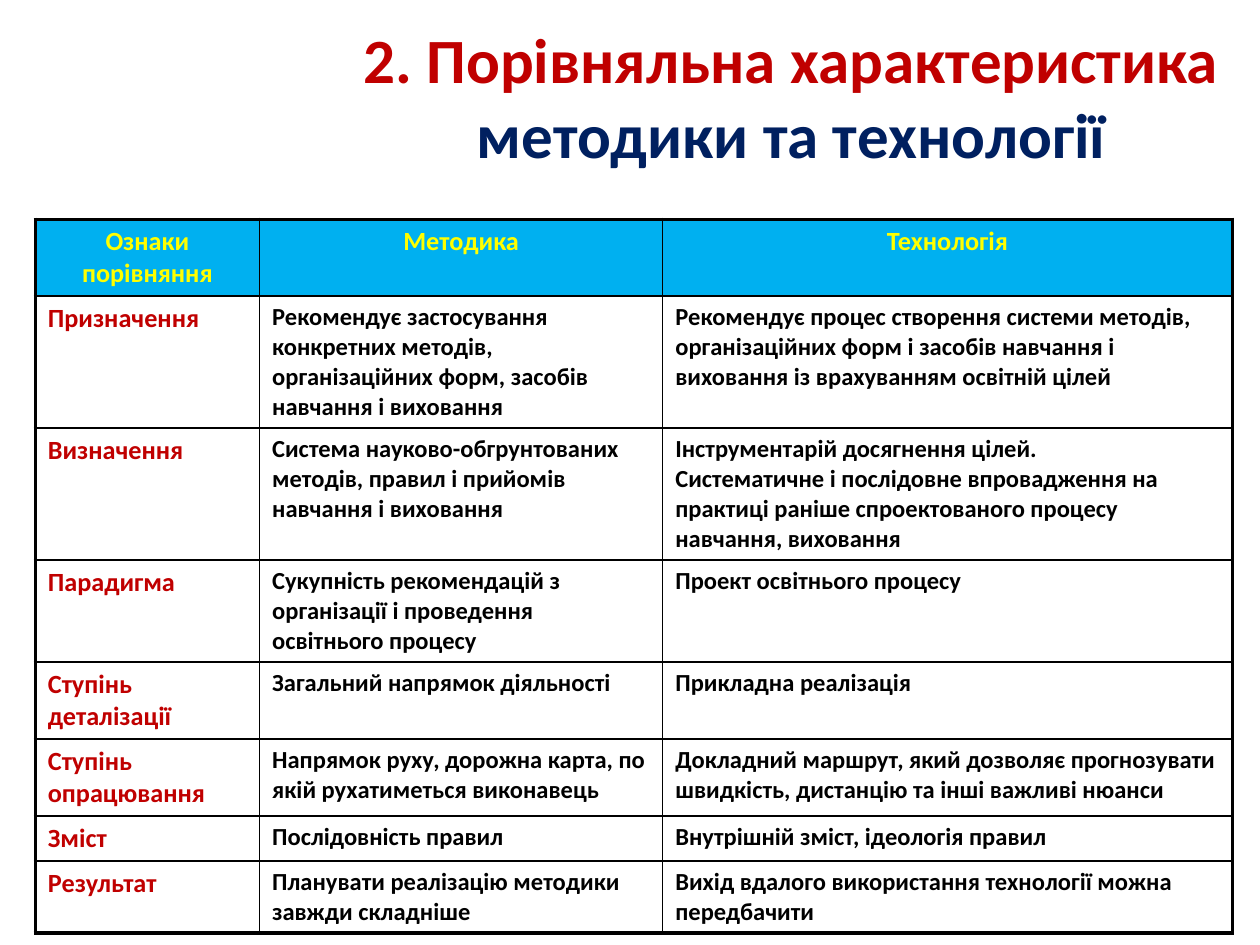
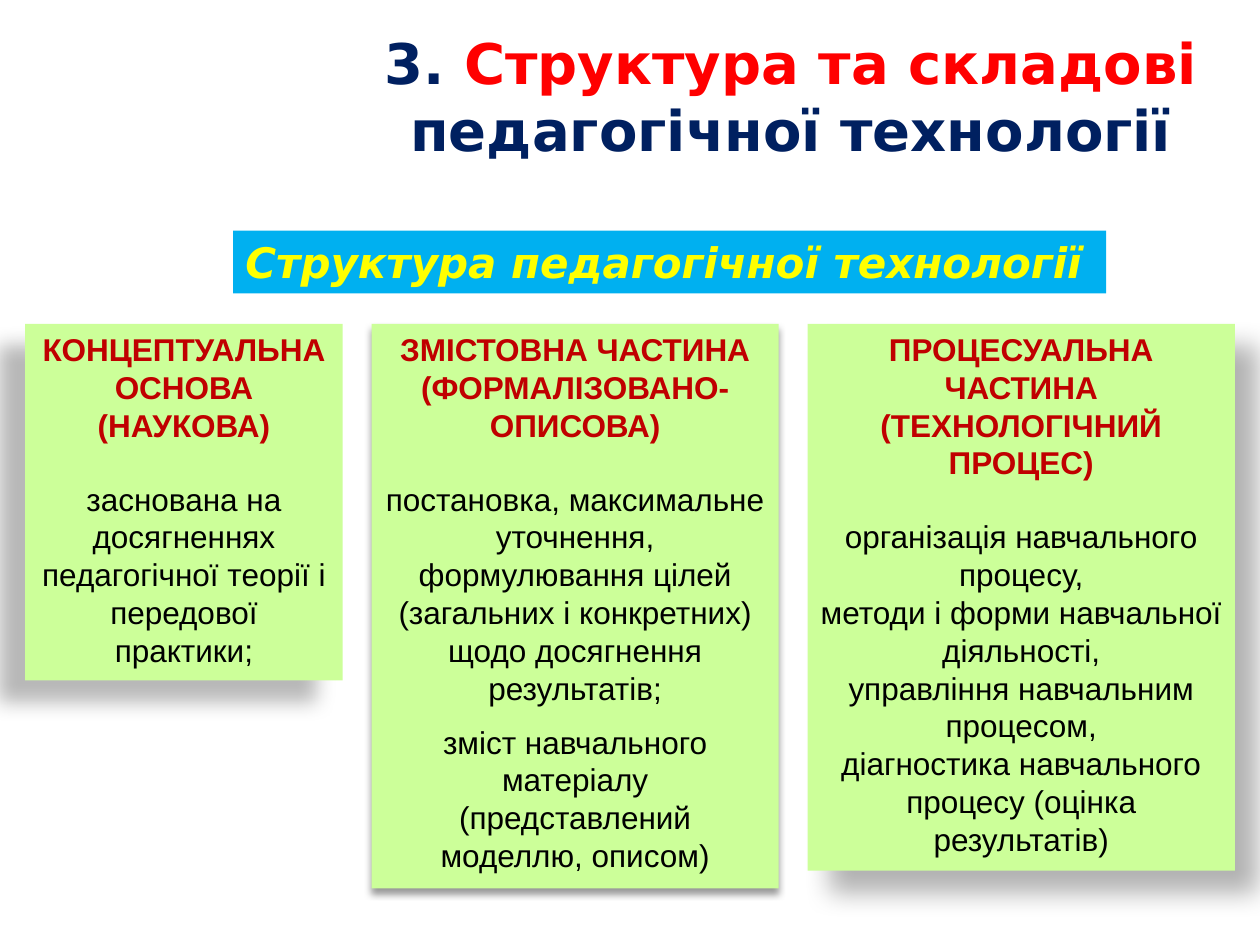
from dataclasses import dataclass
from typing import NamedTuple

from lxml import etree
from pptx import Presentation
from pptx.dml.color import RGBColor
from pptx.enum.shapes import MSO_SHAPE
from pptx.enum.text import MSO_ANCHOR, MSO_AUTO_SIZE, PP_ALIGN
from pptx.oxml.ns import qn
from pptx.util import Emu, Pt

RECT = MSO_SHAPE.RECTANGLE
TOP, MIDDLE = MSO_ANCHOR.TOP, MSO_ANCHOR.MIDDLE
FIXED, GROW = MSO_AUTO_SIZE.NONE, MSO_AUTO_SIZE.SHAPE_TO_FIT_TEXT
LEFT, CENTER = PP_ALIGN.LEFT, PP_ALIGN.CENTER
SCALE = 9144
TITLE_ONLY = 5


@dataclass(frozen=True)
class Theme:
    navy: str = "002060"
    crimson: str = "C00000"
    red: str = "FF0000"
    yellow: str = "FFFF00"
    blue: str = "00B0F0"
    lime: str = "CCFF99"
    black: str = "000000"
    sans: str = "Calibri"
    wide: str = "DejaVu Sans"
    plain: str = "Arial"
    main: int = 36
    second: int = 32
    banner: int = 24
    panel: int = 18
    label: int = 15
    cell: int = 14
    thick: float = 2.25
    thin: float = 1


THEME = Theme()


class Box(NamedTuple):
    left: int
    top: int
    width: int
    height: int


class Shade(NamedTuple):
    alpha: int
    blur: float
    reach: float
    angle: int


class Panel(NamedTuple):
    width: int
    height: int
    shade: Shade
    head: str
    body: list[str]
    gap: float = 0


TITLE = Box(256, 13, 744, 126)
BANNER = Box(185, 183, 693, 50)
TABLE = Box(28, 174, 950, 505)
PANEL_LEFT, PANEL_TOP, PANEL_GAP = 20, 257, 23
HEAD_GAP = 20.7

COLS = [178, 320, 452]
ROWS = [55, 93, 102, 75, 50, 50, 33, 47]
CELLS = [
    ("Ознаки порівняння", "Методика", "Технологія"),
    ("Призначення",
     "Рекомендує застосування конкретних методів, організаційних форм, "
     "засобів навчання і виховання",
     "Рекомендує процес створення системи методів, організаційних форм і "
     "засобів навчання і виховання із врахуванням освітній цілей"),
    ("Визначення",
     "Система науково-обгрунтованих методів, правил і прийомів навчання і виховання",
     "Інструментарій досягнення цілей.\n"
     "Систематичне і послідовне впровадження на практиці раніше "
     "спроектованого процесу навчання, виховання"),
    ("Парадигма",
     "Сукупність рекомендацій з організації і проведення освітнього процесу",
     "Проект освітнього процесу"),
    ("Ступінь деталізації", "Загальний напрямок діяльності", "Прикладна реалізація"),
    ("Ступінь опрацювання",
     "Напрямок руху, дорожна карта, по якій рухатиметься виконавець",
     "Докладний маршрут, який дозволяє прогнозувати швидкість, дистанцію "
     "та інші важливі нюанси"),
    ("Зміст", "Послідовність правил", "Внутрішній зміст, ідеологія правил"),
    ("Результат",
     "Планувати реалізацію методики завжди складніше",
     "Вихід вдалого використання технології можна передбачити"),
]

PANELS = [
    Panel(252, 283, Shade(28, 11.8, 19.7, 141),
          "КОНЦЕПТУАЛЬНА ОСНОВА (НАУКОВА)",
          ["заснована на досягненнях педагогічної теорії і передової практики;"]),
    Panel(323, 448, Shade(40, 4, 3, 90),
          "ЗМІСТОВНА ЧАСТИНА (ФОРМАЛІЗОВАНО-ОПИСОВА)",
          ["постановка, максимальне уточнення, формулювання цілей "
           "(загальних і конкретних) щодо досягнення результатів;",
           "зміст навчального матеріалу (представлений моделлю, описом)"],
          9.2),
    Panel(339, 434, Shade(30, 15, 18, 45),
          "ПРОЦЕСУАЛЬНА ЧАСТИНА (ТЕХНОЛОГІЧНИЙ ПРОЦЕС)",
          ["організація навчального процесу,",
           "методи і форми навчальної діяльності,",
           "управління навчальним процесом,",
           "діагностика навчального процесу (оцінка результатів)"]),
]


def px(size: int) -> Emu:
    return Emu(size * SCALE)


def place(box: Box) -> list[Emu]:
    return [px(side) for side in box]


def write(frame, text: str, *, face: str, size: int, color: str, bold: bool = True,
          slant: bool = False, align=LEFT, gap: float = 0, join: bool = False) -> None:
    for line in text.split("\n"):
        fresh = bool(frame.text) and not join
        para = frame.add_paragraph() if fresh else frame.paragraphs[-1]
        para.alignment = align
        if gap:
            para.space_before = Pt(gap)
        run = para.add_run()
        run.text = line
        font = run.font
        font.name, font.size = face, Pt(size)
        font.bold, font.italic = bold, slant
        font.color.rgb = RGBColor.from_string(color)


def add_page(deck, runs: list[tuple[str, str]], face: str, size: int):
    page = deck.slides.add_slide(deck.slide_layouts[TITLE_ONLY])
    title = page.shapes.title
    title.left, title.top, title.width, title.height = place(TITLE)
    frame = title.text_frame
    frame.word_wrap, frame.auto_size = True, FIXED
    frame.vertical_anchor = MIDDLE
    for text, color in runs:
        write(frame, text, face=face, size=size, color=color, align=CENTER, join=True)
    return page


def add_block(page, box: Box, fill: str, shade: Shade | None = None):
    block = page.shapes.add_shape(RECT, *place(box))
    block.fill.solid()
    block.fill.fore_color.rgb = RGBColor.from_string(fill)
    block.line.fill.background()
    block.shadow.inherit = False
    if shade:
        cast = etree.SubElement(
            block.element.spPr.find(qn("a:effectLst")), qn("a:outerShdw"),
            blurRad=str(Pt(shade.blur)), dist=str(Pt(shade.reach)),
            dir=str(shade.angle * 60000), algn="ctr", rotWithShape="0")
        tint = etree.SubElement(cast, qn("a:srgbClr"), val=THEME.black)
        etree.SubElement(tint, qn("a:alpha"), val=str(shade.alpha * 1000))
    frame = block.text_frame
    frame.word_wrap, frame.auto_size = True, GROW
    frame.vertical_anchor = TOP
    return frame


def add_edge(cell, side: str, width: float) -> None:
    edge = etree.SubElement(cell._tc.get_or_add_tcPr(), qn(f"a:ln{side}"), w=str(Pt(width)))
    fill = etree.SubElement(edge, qn("a:solidFill"))
    etree.SubElement(fill, qn("a:srgbClr"), val=THEME.black)


def draw_cell(cell, text: str, row: int, col: int) -> None:
    outer = {"L": col == 0, "R": col == len(COLS) - 1,
             "T": row == 0, "B": row == len(ROWS) - 1}
    for side, rim in outer.items():
        add_edge(cell, side, THEME.thick if rim else THEME.thin)
    if row == 0:
        cell.fill.solid()
        cell.fill.fore_color.rgb = RGBColor.from_string(THEME.blue)
        size, color, align = THEME.label, THEME.yellow, CENTER
    else:
        cell.fill.background()
        size, color = (THEME.cell, THEME.black) if col else (THEME.label, THEME.crimson)
        align = LEFT
    write(cell.text_frame, text, face=THEME.sans, size=size, color=color, align=align)


def draw_table(page) -> None:
    table = page.shapes.add_table(len(ROWS), len(COLS), *place(TABLE)).table
    table.first_row = table.horz_banding = False
    for column, width in zip(table.columns, COLS):
        column.width = px(width)
    for row, height in enumerate(ROWS):
        table.rows[row].height = px(height)
        for col, text in enumerate(CELLS[row]):
            draw_cell(table.cell(row, col), text, row, col)


def draw_panels(page) -> None:
    left = PANEL_LEFT
    for panel in PANELS:
        box = Box(left, PANEL_TOP, panel.width, panel.height)
        frame = add_block(page, box, THEME.lime, panel.shade)
        look = {"face": THEME.plain, "size": THEME.panel, "align": CENTER}
        write(frame, panel.head, color=THEME.crimson, **look)
        for index, text in enumerate(panel.body):
            gap = panel.gap if index else HEAD_GAP
            write(frame, text, color=THEME.black, bold=False, gap=gap, **look)
        left += panel.width + PANEL_GAP


def main() -> None:
    deck = Presentation()
    deck.slide_width, deck.slide_height = px(1000), px(750)

    page = add_page(deck, [("2. Порівняльна характеристика ", THEME.crimson),
                           ("методики та технології", THEME.navy)],
                    THEME.sans, THEME.main)
    draw_table(page)

    page = add_page(deck, [("3. ", THEME.navy),
                           ("Структура та складові ", THEME.red),
                           ("педагогічної технології", THEME.navy)],
                    THEME.wide, THEME.second)
    frame = add_block(page, BANNER, THEME.blue)
    write(frame, "Структура педагогічної технології", face=THEME.wide,
          size=THEME.banner, color=THEME.yellow, slant=True)
    draw_panels(page)

    deck.save("out.pptx")


if __name__ == "__main__":
    main()
